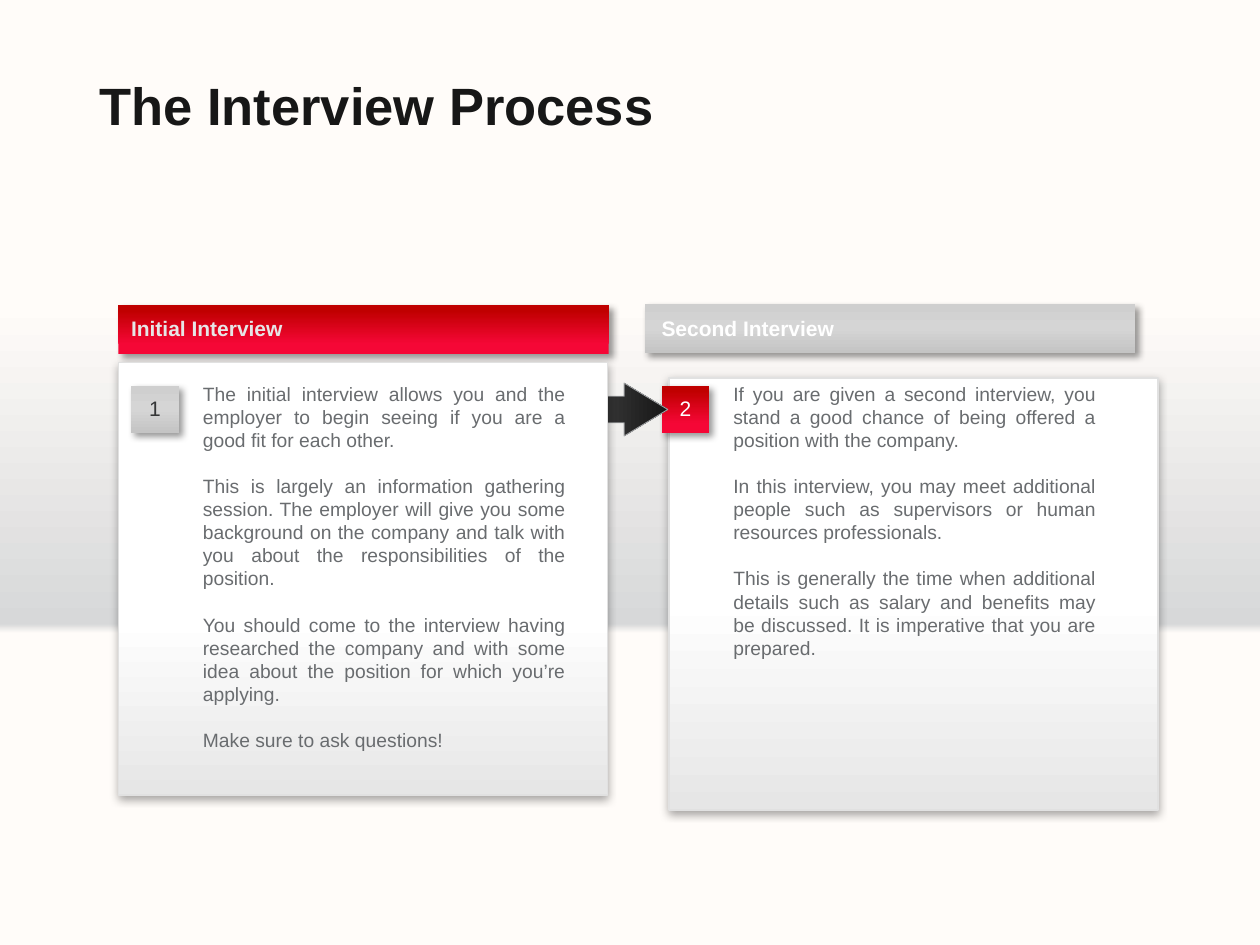
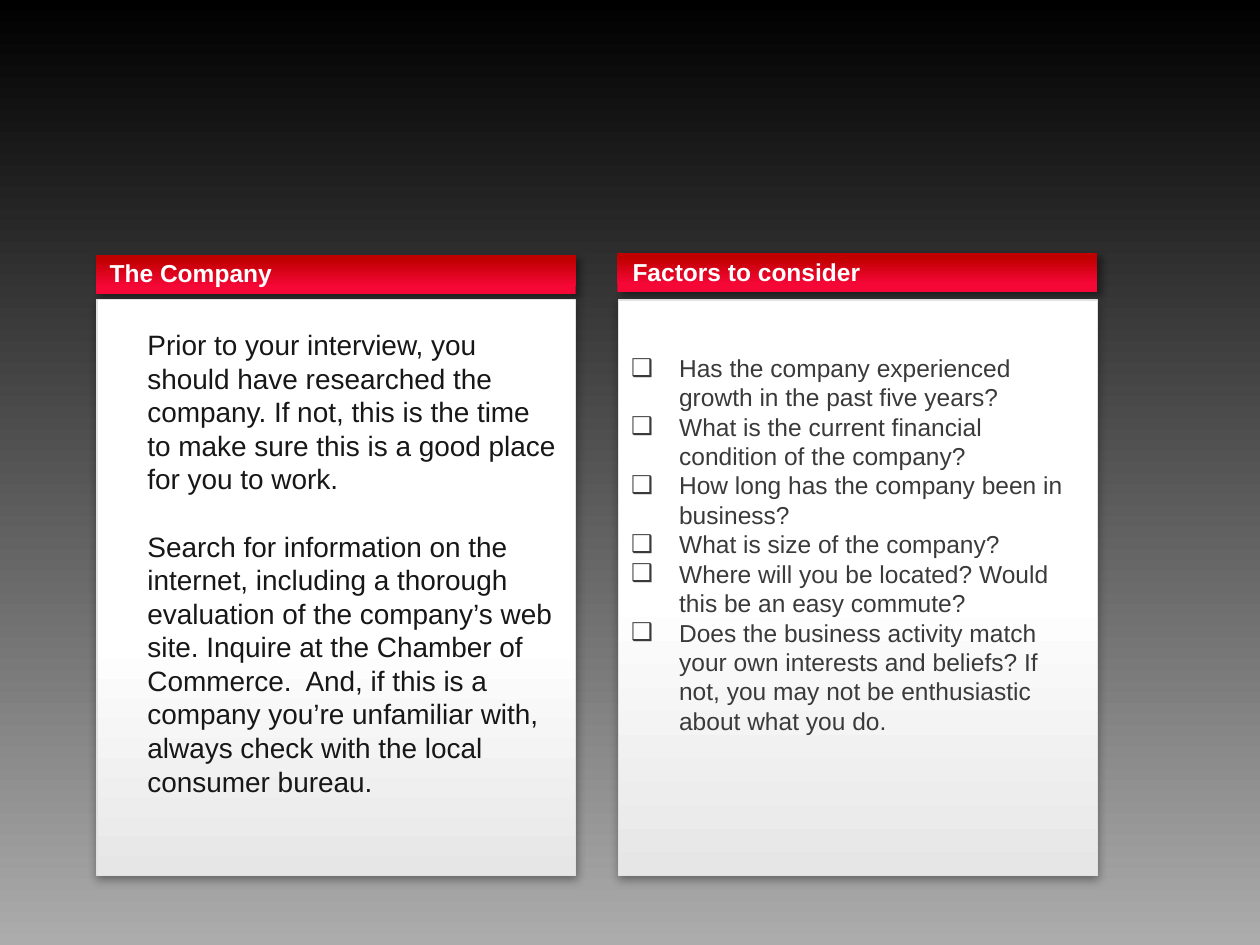
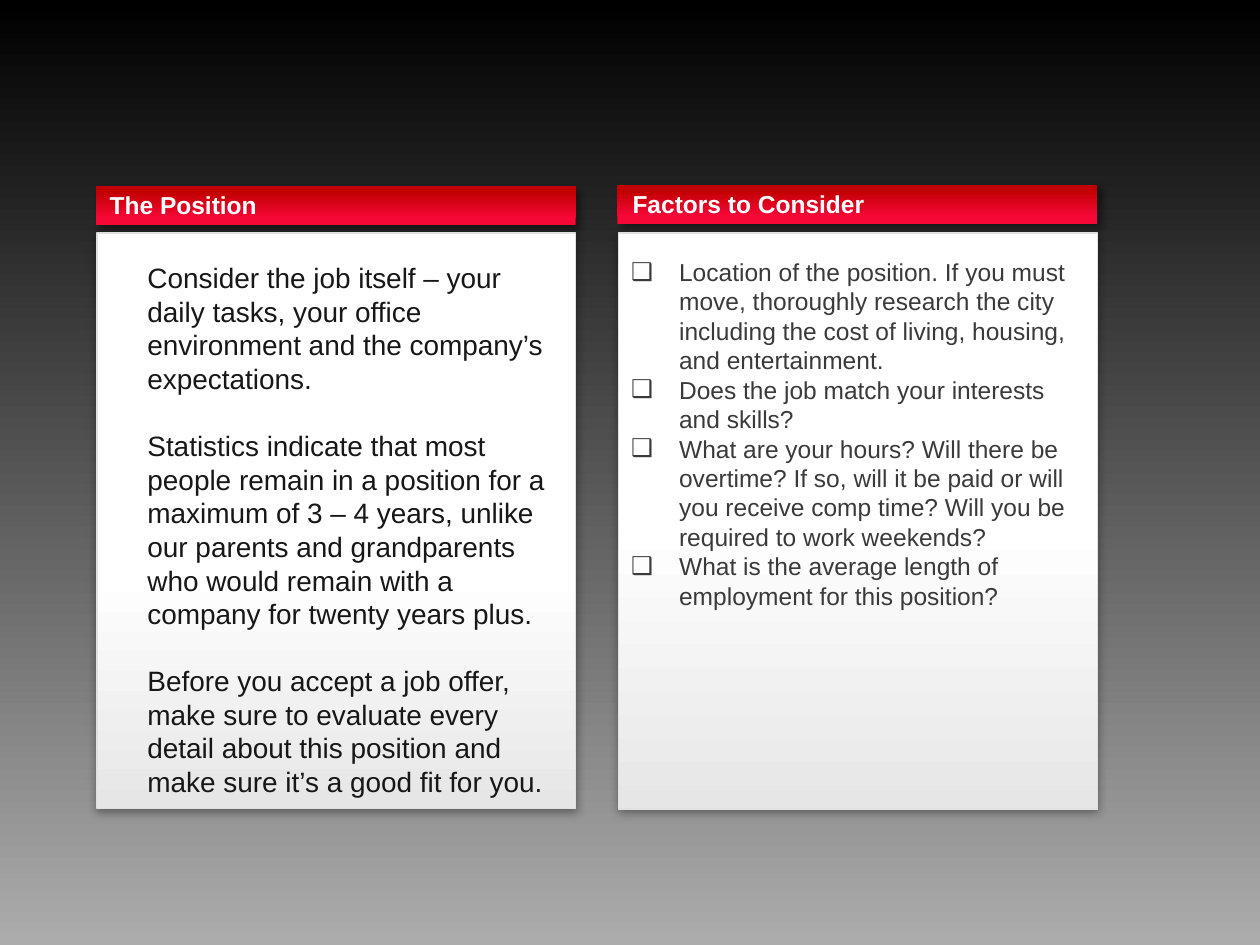
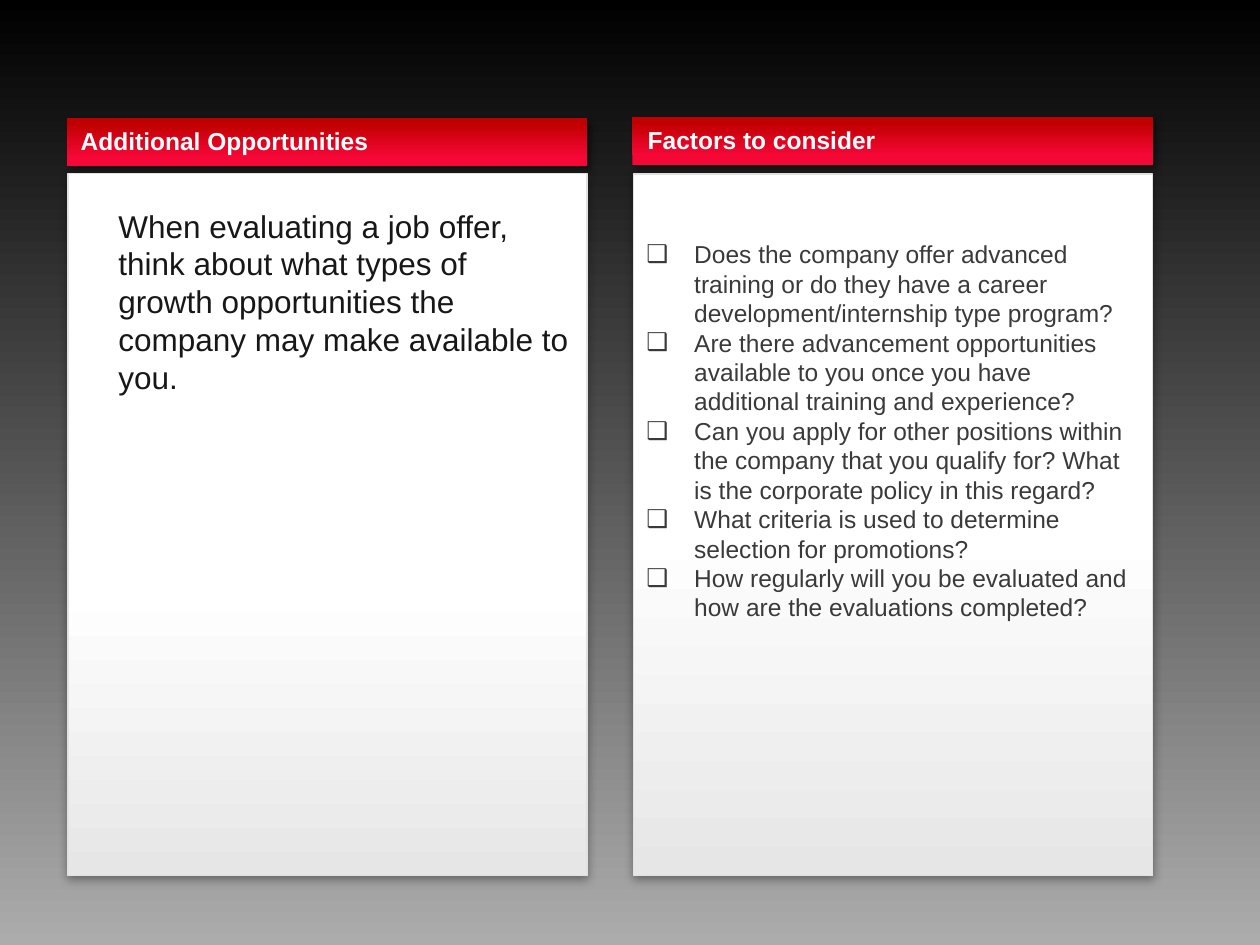
from lxml.etree import SubElement
from pptx import Presentation
from pptx.dml.color import RGBColor
from pptx.enum.shapes import MSO_SHAPE as SHAPE
from pptx.enum.text import MSO_ANCHOR as ANCHOR, MSO_AUTO_SIZE as AUTO, PP_ALIGN as ALIGN
from pptx.oxml.ns import qn
from pptx.util import Pt

PX = 9144  # 100 px to the inch
FONT = "Arial"
INK, GRAPHITE, SLATE = "171717", "3A3A3A", "696C6F"
WHITE, PALE, EDGE, ARROW_EDGE = "FFFFFF", "E6E6E6", "E1E1E1", "A0A2A4"
UP, DOWN, RIGHTWARD = 90, 270, 0

# Gradients: stops, then direction
RED = [(11, "F50736"), (20, "F50736"), (89, "C00000")], UP
SILVER = [(0, "CFCFCF"), (50, "D5D5D5"), (100, "C4C4C4")], DOWN
PANEL_LEFT = [(0, PALE), (41, WHITE), (100, WHITE)], UP
PANEL_RIGHT = [(0, PALE), (49, WHITE), (100, WHITE)], UP
CHARCOAL = [(0, GRAPHITE), (100, INK)], RIGHTWARD
LIGHT_PAGE = [(33, "FFFCF9"), (34, "D7D8D9"), (68, "FFFCF9")], UP
DARK_PAGE = [(0, "ACACAC"), (100, "000000")], UP

# Shadows: opacity in percent, blur and distance in points, direction in degrees
BAND_SHADOW = 40, 4, 3, 45
PANEL_SHADOW = 35, 5, 1.8, 90


def rgb(color):
    return RGBColor.from_string(color)


def paint(fill, owner, gradient):
    """Give the fill, which lies within the XML element owner, a gradient."""
    stops, angle = gradient
    fill.gradient()
    fill.gradient_angle = angle
    stop_list = next(owner.iter(qn("a:gsLst")))
    stop_list.clear()
    for pos, color in stops:
        gs = SubElement(stop_list, qn("a:gs"), pos=str(pos * 1000))
        SubElement(gs, qn("a:srgbClr"), val=color)


def cast_shadow(sp, shadow):
    opacity, blur, dist, angle = shadow
    effects = sp._element.spPr.find(qn("a:effectLst"))
    outer = SubElement(effects, qn("a:outerShdw"), blurRad=str(Pt(blur)), dist=str(Pt(dist)),
                       dir=str(angle * 60000), algn="ctr", rotWithShape="0")
    color = SubElement(outer, qn("a:srgbClr"), val="000000")
    SubElement(color, qn("a:alpha"), val=str(opacity * 1000))


def place(sp, box):
    sp.left, sp.top, sp.width, sp.height = (n * PX for n in box)


def style(sp, gradient, line=None, width=0.75, shadow=None):
    paint(sp.fill, sp._element.spPr, gradient)
    if line:
        sp.line.color.rgb = rgb(line)
        sp.line.width = Pt(width)
    else:
        sp.line.fill.background()
    sp.shadow.inherit = False
    if shadow:
        cast_shadow(sp, shadow)


def add_block(slide, box, gradient, kind=SHAPE.RECTANGLE, **look):
    sp = slide.shapes.add_shape(kind, *(n * PX for n in box))
    style(sp, gradient, **look)
    return sp


def add_band(slide, box, gradient):
    return add_block(slide, box, gradient, shadow=BAND_SHADOW)


def add_panel(slide, box, gradient):
    return add_block(slide, box, gradient, line=EDGE, shadow=PANEL_SHADOW)


def to_front(slide, sp):
    slide.shapes._spTree.append(sp._element)


def set_frame(sp, anchor, margins):
    tf = sp.text_frame
    tf.word_wrap = True
    tf.auto_size = AUTO.NONE
    tf.vertical_anchor = anchor
    tf.margin_left, tf.margin_top, tf.margin_right, tf.margin_bottom = (n * PX for n in margins)
    return tf


def add_run(p, text, size, color, bold=False):
    r = p.add_run()
    r.text = text
    f = r.font
    f.name, f.size, f.bold, f.color.rgb = FONT, Pt(size), bold, rgb(color)


def write_line(sp, text, size, color, bold=True, align=ALIGN.LEFT):
    tf = set_frame(sp, ANCHOR.MIDDLE, (0, 5, 0, 5))
    p = tf.paragraphs[0]
    p.alignment = align
    p.line_spacing = 0.95
    add_run(p, text, size, color, bold)


def write_paragraphs(sp, texts, size, color, margins, align=ALIGN.LEFT, bullet=None):
    """Plain paragraphs stand one line apart; bulleted ones follow on directly."""
    tf = set_frame(sp, ANCHOR.TOP, margins)
    pitch = Pt(size * 1.2)
    hang = 38 * PX if bullet else 0
    for i, text in enumerate(texts):
        p = tf.add_paragraph() if i else tf.paragraphs[0]
        p.alignment = align
        p.line_spacing = pitch
        p.space_before = Pt(0) if bullet or not i else pitch
        p.space_after = Pt(0)
        pPr = p._p.get_or_add_pPr()
        pPr.set("marL", str(hang))
        pPr.set("indent", str(-hang))
        if bullet:
            SubElement(pPr, qn("a:buChar"), char=bullet)
        else:
            SubElement(pPr, qn("a:buNone"))
        add_run(p, text, size, color)


def add_heading(slide, box, text, size, color=WHITE, sp=None):
    """Write a band heading into a placeholder if given, else into a text box."""
    if sp is None:
        sp = slide.shapes.add_textbox(0, 0, PX, PX)
    place(sp, box)
    write_line(sp, text, size, color)
    to_front(slide, sp)


def add_badge(slide, x, number, gradient, color):
    sp = add_band(slide, (x, 306, 38, 38), gradient)
    write_line(sp, number, 12, color, bold=False, align=ALIGN.CENTER)


def add_stage_text(slide, sp, box, texts):
    place(sp, box)
    write_paragraphs(sp, texts, 11, SLATE, (10, 5, 10, 5), ALIGN.JUSTIFY)
    to_front(slide, sp)


def build_process(prs, layout):
    slide = prs.slides.add_slide(layout)
    title, initial, second = slide.placeholders
    place(title, (79, 52, 553, 66))
    write_line(title, "The Interview Process", 30, INK)

    add_band(slide, (512, 241, 389, 39), SILVER)
    add_panel(slide, (531, 300, 388, 343), PANEL_RIGHT)
    add_badge(slide, 525, "2", RED, WHITE)
    add_stage_text(slide, second, (572, 298, 308, 232), [
        "If you are given a second interview, you stand a good chance of being offered "
        "a position with the company.",
        "In this interview, you may meet additional people such as supervisors or human "
        "resources professionals.",
        "This is generally the time when additional details such as salary and benefits "
        "may be discussed. It is imperative that you are prepared.",
    ])
    add_heading(slide, (525, 249, 292, 24), "Second Interview", 12)

    arrow = add_block(slide, (472, 304, 58, 42), CHARCOAL, SHAPE.RIGHT_ARROW,
                      line=ARROW_EDGE, width=0.5)
    arrow.adjustments[0], arrow.adjustments[1] = 0.5, 0.825

    add_band(slide, (94, 242, 389, 39), RED)
    add_panel(slide, (94, 288, 388, 343), PANEL_LEFT)
    add_badge(slide, 104, "1", SILVER, "353637")
    add_stage_text(slide, initial, (151, 298, 308, 362), [
        "The initial interview allows you and the employer to begin seeing if you are a "
        "good fit for each other.",
        "This is largely an information gathering session. The employer will give you some "
        "background on the company and talk with you about the responsibilities of the position.",
        "You should come to the interview having researched the company and with some idea "
        "about the position for which you’re applying.",
        "Make sure to ask questions!",
    ])
    add_heading(slide, (104, 249, 292, 24), "Initial Interview", 12, PALE)


def build_factors(prs, layout, topic, advice, heading, factors, top=201, left=76, right=490,
                  width=381, band=31, panel=(238, 457), text=(255, 387), size=16, list_inset=42):
    """Advice in the left panel, a check list in the right one; panel and text are (top, height)."""
    slide = prs.slides.add_slide(layout)
    title, spare, advice_body, spare_heading, check_list = slide.placeholders
    spare._element.getparent().remove(spare._element)
    panel_top, panel_height = panel
    text_top, text_height = text

    add_band(slide, (right, top, width, band), RED)
    place(check_list, (right + 1, panel_top, width - 1, panel_height))
    style(check_list, PANEL_RIGHT, line=EDGE, shadow=PANEL_SHADOW)
    write_paragraphs(check_list, factors, 14, GRAPHITE, (10, list_inset, 10, 5), bullet="❑")
    to_front(slide, check_list)
    add_heading(slide, (right + 12, top + 6, width - 95, band - 12), heading, 14,
                sp=spare_heading)

    add_band(slide, (left, top + 1, width, band), RED)
    add_panel(slide, (left + 1, panel_top, width - 1, panel_height), PANEL_LEFT)
    add_heading(slide, (left + 11, top + 7, width - 95, band - 12), topic, 14, sp=title)
    place(advice_body, (left + 6, text_top, width - 12, text_height))
    write_paragraphs(advice_body, advice, size, INK, (35, 5, 8, 5))
    to_front(slide, advice_body)


def main():
    prs = Presentation()
    prs.slide_width, prs.slide_height = 1000 * PX, 750 * PX
    light, dark = prs.slide_layouts[3], prs.slide_layouts[4]
    for layout, gradient in ((light, LIGHT_PAGE), (dark, DARK_PAGE)):
        paint(layout.background.fill, layout._element.cSld, gradient)

    build_process(prs, light)
    build_factors(prs, dark, "The Company", [
        "Prior to your interview, you should have researched the company. If not, this is the "
        "time to make sure this is a good place for you to work.",
        "Search for information on the internet, including a thorough evaluation of the "
        "company’s web site. Inquire at the Chamber of Commerce.  And, if this is a company "
        "you’re unfamiliar with, always check with the local consumer bureau.",
    ], "Factors to consider", [
        "Has the company experienced growth in the past five years?",
        "What is the current financial condition of the company?",
        "How long has the company been in business?",
        "What is size of the company?",
        "Where will you be located? Would this be an easy commute?",
        "Does the business activity match your own interests and beliefs? If not, you may not "
        "be enthusiastic about what you do.",
    ])
    build_factors(prs, dark, "The Position", [
        "Consider the job itself – your daily tasks, your office environment and the "
        "company’s expectations.",
        "Statistics indicate that most people remain in a position for a maximum of 3 – 4 "
        "years, unlike our parents and grandparents who would remain with a company for "
        "twenty years plus.",
        "Before you accept a job offer, make sure to evaluate every detail about this position "
        "and make sure it’s a good fit for you.",
    ], "Factors to Consider", [
        "Location of the position. If you must move, thoroughly research the city including "
        "the cost of living, housing, and entertainment.",
        "Does the job match your interests and skills?",
        "What are your hours? Will there be overtime? If so, will it be paid or will you "
        "receive comp time? Will you be required to work weekends?",
        "What is the average length of employment for this position?",
    ], top=147, panel=(185, 457), text=(202, 441), list_inset=19)
    build_factors(prs, dark, "Additional Opportunities", [
        "When evaluating a job offer, think about what types of growth opportunities the "
        "company may make available to you.",
    ], "Factors to consider", [
        "Does the company offer advanced training or do they have a career "
        "development/internship type program?",
        "Are there advancement opportunities available to you once you have additional "
        "training and experience?",
        "Can you apply for other positions within the company that you qualify for? What is "
        "the corporate policy in this regard?",
        "What criteria is used to determine selection for promotions?",
        "How regularly will you be evaluated and how are the evaluations completed?",
    ], top=93, left=53, right=502, width=413, band=38, panel=(138, 557), text=(159, 222),
        size=18, list_inset=52)
    prs.save("out.pptx")


if __name__ == "__main__":
    main()
